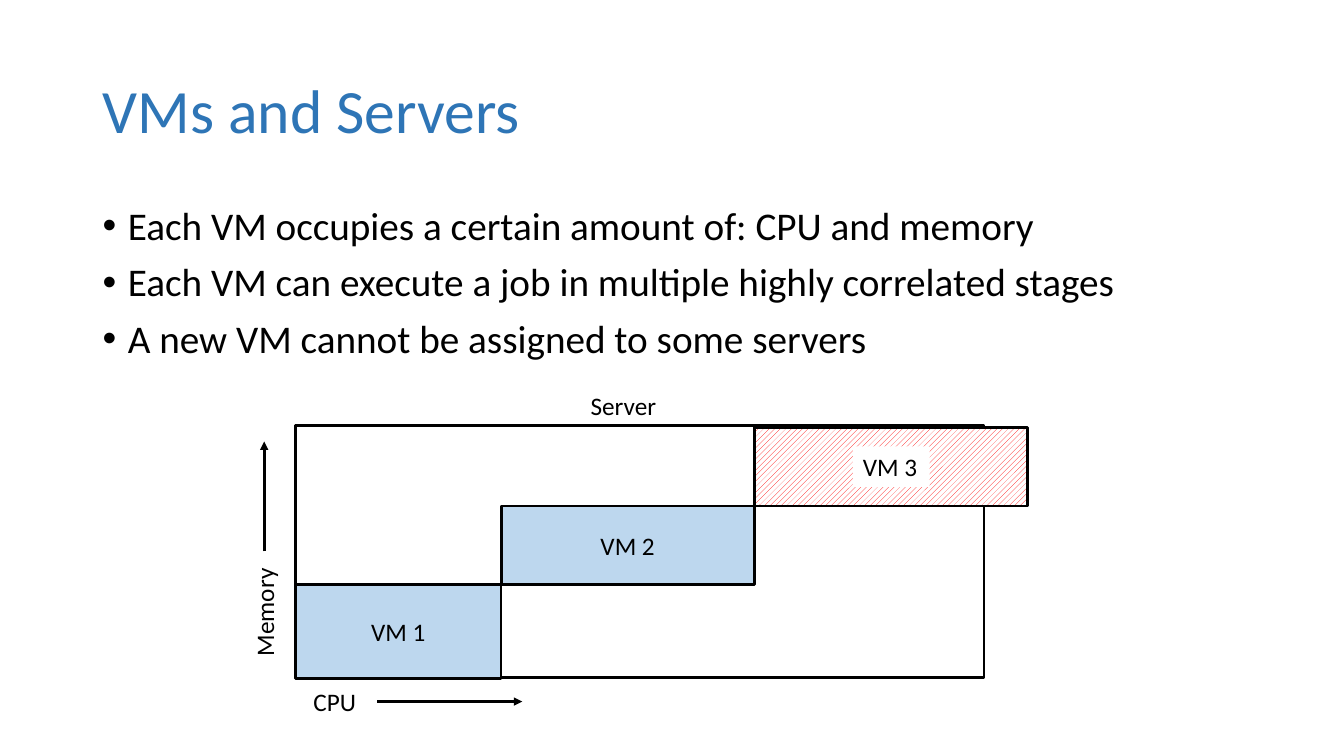
from pptx import Presentation
from pptx.dml.color import RGBColor
from pptx.enum.dml import MSO_PATTERN
from pptx.enum.shapes import MSO_CONNECTOR, MSO_SHAPE
from pptx.enum.text import MSO_ANCHOR, MSO_AUTO_SIZE, PP_ALIGN
from pptx.oxml.ns import qn
from pptx.util import Pt
from lxml import etree

PX = 9144  # EMU per px, 100 px to the inch
FONT = "Calibri"
BLACK = RGBColor(0x00, 0x00, 0x00)
WHITE = RGBColor(0xFF, 0xFF, 0xFF)
RED = RGBColor(0xFF, 0x00, 0x00)
TITLE_BLUE = RGBColor(0x2E, 0x75, 0xB6)
VM_BLUE = RGBColor(0xBD, 0xD7, 0xEE)
RECTANGLE = MSO_SHAPE.RECTANGLE
STRAIGHT = MSO_CONNECTOR.STRAIGHT
MIDDLE = MSO_ANCHOR.MIDDLE
LEFT, CENTER = PP_ALIGN.LEFT, PP_ALIGN.CENTER
NO_AUTOFIT = MSO_AUTO_SIZE.NONE
UPWARD_STRIPES = MSO_PATTERN.WIDE_UPWARD_DIAGONAL


def write(paragraph, text, size, color=BLACK, alignment=LEFT):
    paragraph.text = text
    paragraph.alignment = alignment
    paragraph.font.name = FONT
    paragraph.font.size = Pt(size)
    paragraph.font.color.rgb = color


def add_box(left, top, width, height, color):
    box = slide.shapes.add_shape(RECTANGLE, left * PX, top * PX, width * PX, height * PX)
    box.shadow.inherit = False
    box.fill.solid()
    box.fill.fore_color.rgb = color
    box.line.color.rgb = BLACK
    box.line.width = Pt(2)
    return box


presentation = Presentation()
presentation.slide_width, presentation.slide_height = 1333 * PX, 750 * PX
slide = presentation.slides.add_slide(presentation.slide_layouts[5])

# Title
title = slide.shapes.title
title.left, title.top, title.width, title.height = 92 * PX, 40 * PX, 1150 * PX, 145 * PX
title.text_frame.auto_size = NO_AUTOFIT
title.text_frame.vertical_anchor = MIDDLE
write(title.text_frame.paragraphs[0], "VMs and Servers", 44, TITLE_BLUE)
title.text_frame.paragraphs[0].line_spacing = 0.9

# Bullet list
bullets = slide.shapes.add_textbox(92 * PX, 200 * PX, 1150 * PX, 476 * PX)
bullets.text_frame.word_wrap = True
for index, text in enumerate([
    "Each VM occupies a certain amount of: CPU and memory",
    "Each VM can execute a job in multiple highly correlated stages",
    "A new VM cannot be assigned to some servers",
]):
    frame = bullets.text_frame
    paragraph = frame.add_paragraph() if index else frame.paragraphs[0]
    write(paragraph, text, 28)
    paragraph.line_spacing = 0.9
    paragraph.space_before = Pt(10)
    properties = paragraph._p.get_or_add_pPr()
    properties.set("marL", str(25 * PX))
    properties.set("indent", str(-25 * PX))
    bullet_font = etree.Element(qn("a:buFont"), typeface="Arial")
    bullet = etree.Element(qn("a:buChar"), char="•")
    default_run = properties.find(qn("a:defRPr"))
    default_run.addprevious(bullet_font)
    default_run.addprevious(bullet)

# Server outline
add_box(293, 422, 683, 250, WHITE)

# Server and axis labels
for text, left, top, width, rotation in [
    ("Server", 576, 382, 99, 0),
    ("Memory", 205, 584, 114, 270),
    ("CPU", 301, 676, 196, 0),
]:
    label = slide.shapes.add_textbox(left * PX, top * PX, width * PX, 40 * PX)
    label.rotation = rotation
    label.text_frame.word_wrap = True
    write(label.text_frame.paragraphs[0], text, 18)

# Axis arrows: memory up, CPU to the right
for from_x, from_y, to_x, to_y in [(262, 547, 262, 438), (374, 696, 518, 696)]:
    arrow = slide.shapes.add_connector(STRAIGHT, from_x * PX, from_y * PX, to_x * PX, to_y * PX)
    arrow.line.color.rgb = BLACK
    arrow.line.width = Pt(2)
    etree.SubElement(arrow.line._get_or_add_ln(), qn("a:tailEnd"), type="triangle")
    etree.SubElement(arrow._element.spPr, qn("a:effectLst"))

# VMs that fit, stepping up from the lower left corner
vm_left, vm_bottom = 293, 673
for name, width, height in [("VM 1", 204, 93), ("VM 2", 251, 78)]:
    vm = add_box(vm_left, vm_bottom - height, width, height, VM_BLUE)
    vm.text_frame.vertical_anchor = MIDDLE
    write(vm.text_frame.paragraphs[0], name, 18, alignment=CENTER)
    vm_left += width
    vm_bottom -= height

# VM that does not fit
rejected_vm = add_box(vm_left, vm_bottom - 78, 271, 78, WHITE)
rejected_vm.fill.patterned()
rejected_vm.fill.pattern = UPWARD_STRIPES
rejected_vm.fill.fore_color.rgb = RED
rejected_vm.fill.back_color.rgb = WHITE
rejected_label = add_box(846, 443, 76, 40, WHITE)
rejected_label.line.fill.background()
rejected_label.text_frame.word_wrap = False
rejected_label.text_frame.vertical_anchor = MIDDLE
write(rejected_label.text_frame.paragraphs[0], "VM 3", 18)

presentation.save("out.pptx")
